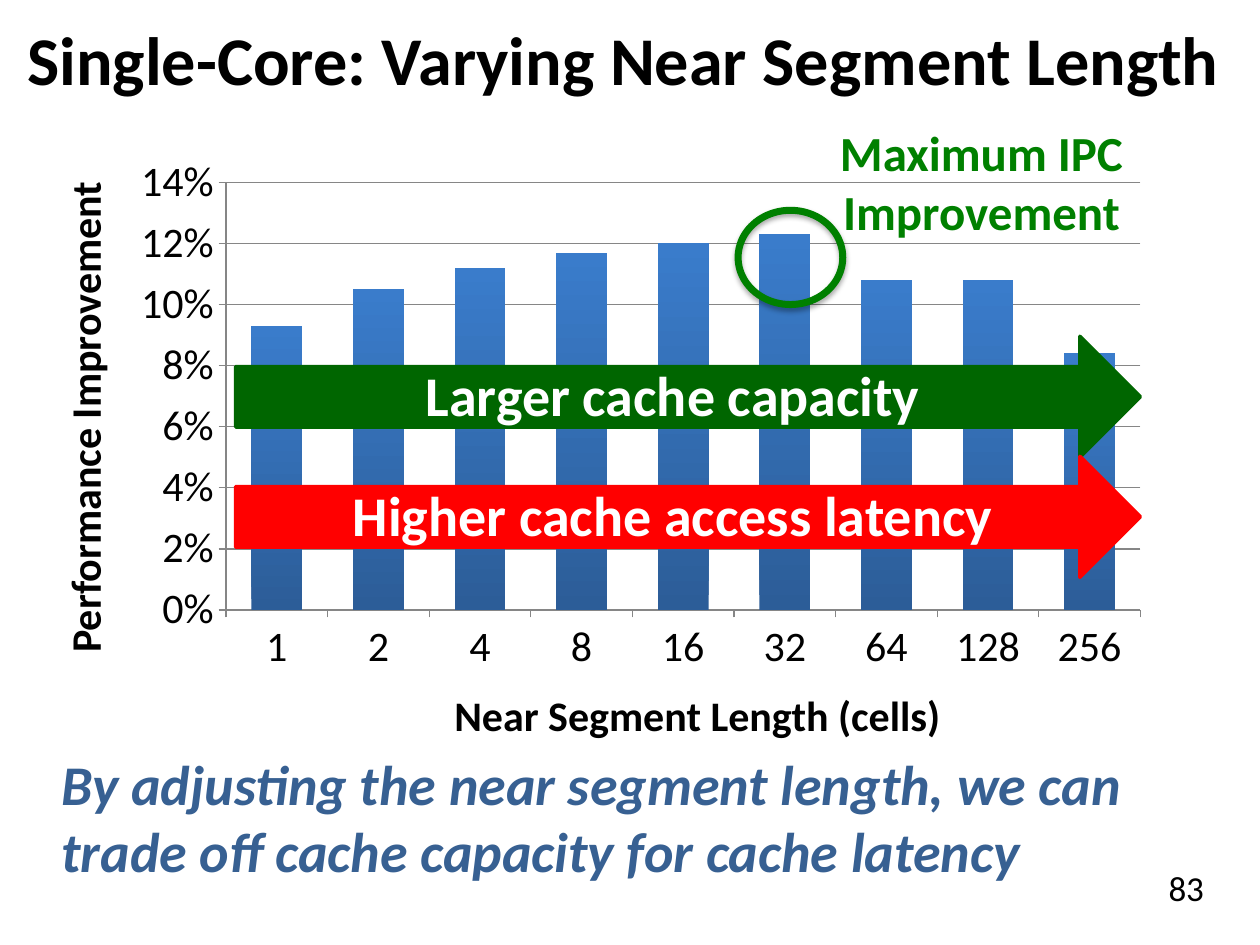
from lxml import etree
from pptx import Presentation
from pptx.chart.data import CategoryChartData
from pptx.dml.color import RGBColor
from pptx.enum.chart import XL_CHART_TYPE, XL_TICK_MARK
from pptx.enum.shapes import MSO_SHAPE
from pptx.enum.text import MSO_ANCHOR, PP_ALIGN
from pptx.oxml.ns import qn
from pptx.util import Cm, Pt

COLUMN = XL_CHART_TYPE.COLUMN_CLUSTERED
TICK_OUT = XL_TICK_MARK.OUTSIDE
RIGHT_ARROW, OVAL = MSO_SHAPE.RIGHT_ARROW, MSO_SHAPE.OVAL
TOP, MIDDLE = MSO_ANCHOR.TOP, MSO_ANCHOR.MIDDLE
LEFT, CENTER = PP_ALIGN.LEFT, PP_ALIGN.CENTER

FONT = "Calibri"
BLACK = RGBColor(0x00, 0x00, 0x00)
WHITE = RGBColor(0xFF, 0xFF, 0xFF)
NAVY = RGBColor(0x37, 0x60, 0x92)
GREEN = RGBColor(0x00, 0x80, 0x00)
DARK_GREEN = RGBColor(0x00, 0x66, 0x00)
RED = RGBColor(0xFF, 0x00, 0x00)
GRID_GRAY = RGBColor(0x86, 0x86, 0x86)
BAR_BOTTOM = RGBColor(0x2C, 0x5D, 0x98)
BAR_TOP = RGBColor(0x3A, 0x7C, 0xCB)

SEGMENT_LENGTHS = ["1", "2", "4", "8", "16", "32", "64", "128", "256"]
IMPROVEMENTS = [0.093, 0.105, 0.112, 0.117, 0.12, 0.123, 0.108, 0.108, 0.084]
PLOT_LAYOUT = {"x": 0.096, "y": 0.054, "w": 0.836, "h": 0.768}


def box(left, top, width, height):
    return Cm(left), Cm(top), Cm(width), Cm(height)


def write(sp, text, size, color=BLACK, bold=True, italic=False,
          align=CENTER, anchor=TOP):
    tf = sp.text_frame
    tf.word_wrap = True
    tf.vertical_anchor = anchor
    p = tf.paragraphs[0]
    p.alignment = align
    r = p.add_run()
    r.text = text
    f = r.font
    f.name, f.size, f.bold, f.italic = FONT, Pt(size), bold, italic
    f.color.rgb = color
    return tf


def add_title(s, text):
    sp = s.shapes.title
    sp.left, sp.top, sp.width, sp.height = box(0, 0, 25.4, 2.34)
    tf = write(sp, text, 39, align=LEFT, anchor=MIDDLE)
    tf.margin_left = Cm(0.55)


def add_label(s, place, text, size, rotation=0, **fmt):
    sp = s.shapes.add_textbox(*box(*place))
    sp.rotation = rotation
    write(sp, text, size, **fmt)


def add_trend_arrow(s, top, text, color):
    sp = s.shapes.add_shape(RIGHT_ARROW, *box(4.75, top, 18.24, 2.44))
    sp.shadow.inherit = False
    sp.fill.solid()
    sp.fill.fore_color.rgb = color
    sp.line.color.rgb = color
    sp.line.width = Pt(2)
    tf = write(sp, text, 32, color=WHITE, anchor=MIDDLE)
    tf.margin_top = 0


def add_highlight_ring(s):
    sp = s.shapes.add_shape(OVAL, *box(14.88, 4.24, 2.11, 1.9))
    sp.fill.background()
    sp.line.color.rgb = GREEN
    sp.line.width = Pt(4)


def style_axis(axis):
    axis.major_tick_mark = TICK_OUT
    axis.format.line.color.rgb = GRID_GRAY
    f = axis.tick_labels.font
    f.name, f.size = FONT, Pt(24)
    f.color.rgb = BLACK


def set_plot_layout(chart):
    area = chart.plots[0]._element.getparent()
    for old in area.findall(qn("c:layout")):
        area.remove(old)
    layout = etree.Element(qn("c:layout"))
    area.insert(0, layout)
    manual = etree.SubElement(layout, qn("c:manualLayout"))
    settings = [("layoutTarget", "inner"), ("xMode", "edge"), ("yMode", "edge")]
    for tag, value in settings + list(PLOT_LAYOUT.items()):
        etree.SubElement(manual, qn(f"c:{tag}")).set("val", str(value))


def add_improvement_chart(s):
    data = CategoryChartData(number_format="0%")
    data.categories = SEGMENT_LENGTHS
    data.add_series("Series 1", IMPROVEMENTS)
    chart = s.shapes.add_chart(COLUMN, *box(2.44, 3.07, 22.05, 11.23), data).chart
    chart.has_title = False
    chart.has_legend = False
    chart.font.name = FONT
    set_plot_layout(chart)

    style_axis(chart.category_axis)
    axis = chart.value_axis
    style_axis(axis)
    axis.minimum_scale, axis.maximum_scale, axis.major_unit = 0, 0.14, 0.02
    axis.tick_labels.number_format = "0%"
    axis.tick_labels.number_format_is_linked = False
    axis.major_gridlines.format.line.color.rgb = GRID_GRAY

    plot = chart.plots[0]
    plot.gap_width = 100
    plot.vary_by_categories = False
    fill = plot.series[0].format.fill
    fill.gradient()
    fill.gradient_angle = 90
    for stop, color in zip(fill.gradient_stops, (BAR_BOTTOM, BAR_TOP)):
        stop.color.rgb = color


def main():
    prs = Presentation()
    prs.slide_width, prs.slide_height = Cm(25.4), Cm(19.05)
    s = prs.slides.add_slide(prs.slide_layouts[5])
    add_label(s, (22.43, 17.35, 2.97, 1.7), "83", 20, bold=False)
    add_improvement_chart(s)
    add_title(s, "Single-Core: Varying Near Segment Length")
    add_label(s, (0.99, 14.99, 23.9, 3),
              "By adjusting the near segment length, we can trade off "
              "cache capacity for cache latency",
              32, color=NAVY, italic=True, align=LEFT)
    add_trend_arrow(s, 6.78, "Larger cache capacity", DARK_GREEN)
    add_trend_arrow(s, 9.2, "Higher cache access latency", RED)
    add_highlight_ring(s)
    add_label(s, (16.61, 2.34, 6.35, 2.82), "Maximum IPC Improvement", 28,
              color=GREEN)
    add_label(s, (-3.68, 7.7, 10.9, 1.42), "Performance Improvement", 24,
              rotation=270)
    add_label(s, (4.85, 13.77, 18.42, 1.02), "Near Segment Length (cells)", 24)
    prs.save("out.pptx")


if __name__ == "__main__":
    main()
